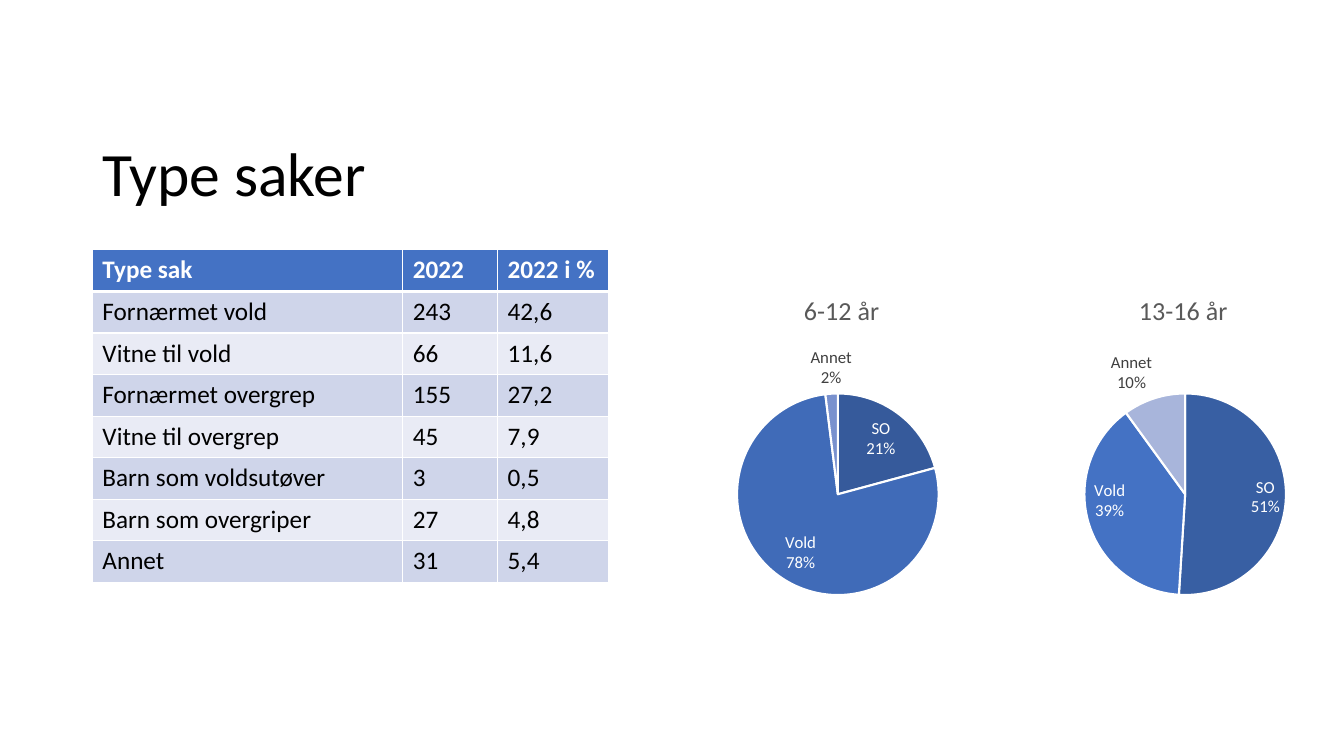
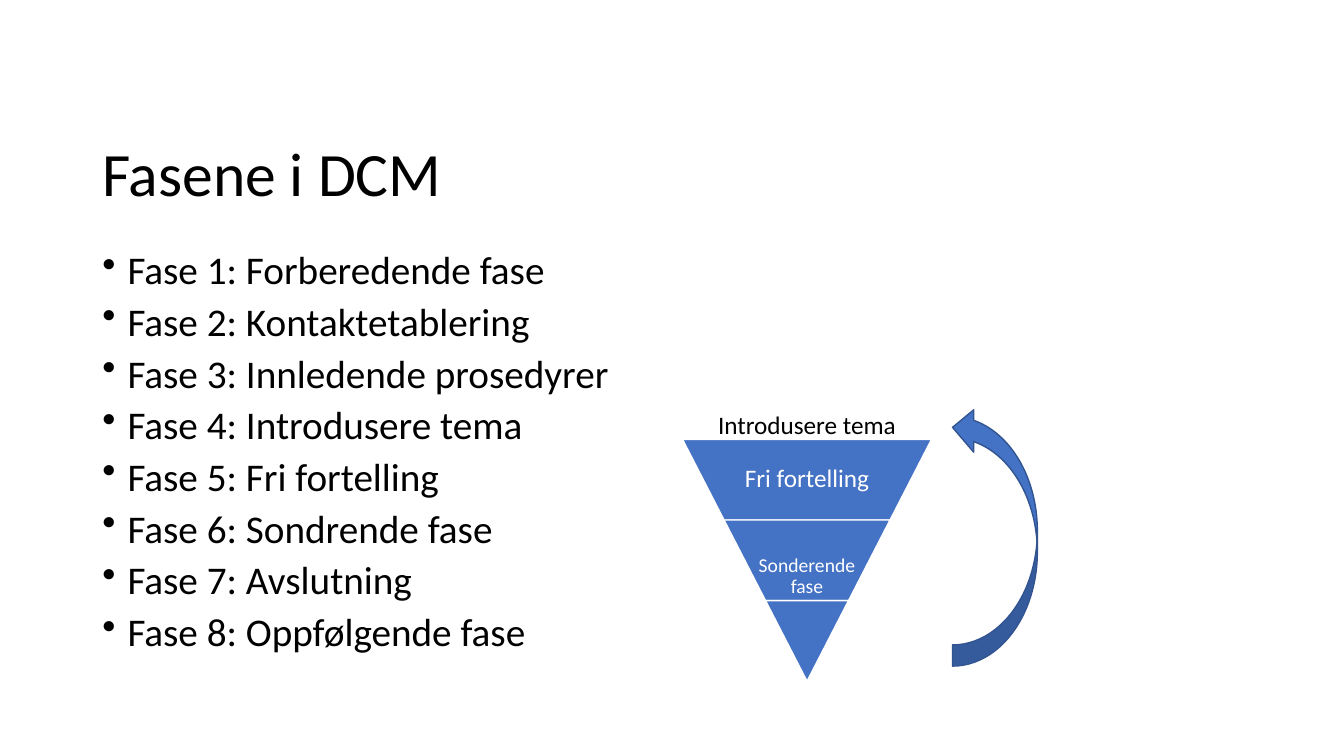
"""Two slides on case types and interview phases."""
from pptx import Presentation
from pptx.chart.data import CategoryChartData
from pptx.dml.color import RGBColor
from pptx.enum.chart import XL_CHART_TYPE, XL_LABEL_POSITION
from pptx.enum.shapes import MSO_SHAPE
from pptx.enum.text import MSO_ANCHOR, PP_ALIGN
from pptx.oxml import parse_xml
from pptx.oxml.ns import nsdecls, qn
from pptx.util import Emu, Pt

PIE = XL_CHART_TYPE.PIE
INSIDE, OUTSIDE = XL_LABEL_POSITION.INSIDE_END, XL_LABEL_POSITION.OUTSIDE_END
TRAPEZOID, CURVED_ARROW = MSO_SHAPE.TRAPEZOID, MSO_SHAPE.CURVED_LEFT_ARROW
TOP, MIDDLE, BOTTOM = MSO_ANCHOR.TOP, MSO_ANCHOR.MIDDLE, MSO_ANCHOR.BOTTOM
LEFT, CENTER = PP_ALIGN.LEFT, PP_ALIGN.CENTER

BLACK = RGBColor(0x00, 0x00, 0x00)
WHITE = RGBColor(0xFF, 0xFF, 0xFF)
BLUE = RGBColor(0x44, 0x72, 0xC4)
DARK_BLUE = RGBColor(0x32, 0x54, 0x91)
BANDS = RGBColor(0xCF, 0xD5, 0xEA), RGBColor(0xE9, 0xEB, 0xF5)
TITLE_GRAY = RGBColor(0x59, 0x59, 0x59)
LABEL_GRAY = RGBColor(0x40, 0x40, 0x40)
AGE_6_12 = RGBColor(0x36, 0x5A, 0x9B), RGBColor(0x40, 0x6B, 0xB8), RGBColor(0x79, 0x91, 0xCE)
AGE_13_16 = RGBColor(0x38, 0x5F, 0xA3), BLUE, RGBColor(0xA8, 0xB5, 0xDB)

FONT = "Calibri"
COLS, ROWS = 32, 18
UNIT = 381000
MARGIN, CONTENT_TOP = 2.2, 5.95


def grid(*lengths):
    """Turn grid columns or rows into lengths."""
    return [Emu(round(n * UNIT)) for n in lengths]


def set_font(font, size, color, bold=False):
    """Apply the deck's typeface with a size and colour."""
    font.name, font.size, font.bold = FONT, Pt(size), bold
    font.color.rgb = color


def put_text(tf, text, size=18, color=BLACK, bold=False, align=LEFT,
             spacing=1.0, before=0, bullet=False):
    """Write one paragraph per line of text."""
    for i, line in enumerate(text.split("\n")):
        p = tf.add_paragraph() if i else tf.paragraphs[0]
        p.alignment, p.line_spacing = align, spacing
        p.space_before = Pt(before if i else 0)
        if bullet:
            pPr = p._p.get_or_add_pPr()
            pPr.set("marL", "228600")
            pPr.set("indent", "-228600")
            pPr.append(parse_xml(f'<a:buChar {nsdecls("a")} char="•"/>'))
        r = p.add_run()
        r.text = line
        set_font(r.font, size, color, bold)


class Deck:
    """Holds the presentation, its style and the current slide."""

    def __init__(self):
        """Start an empty widescreen deck."""
        self.prs = Presentation()
        self.prs.slide_width, self.prs.slide_height = grid(COLS, ROWS)
        self.s = None

    def slide(self, title):
        """Add a blank slide with a title."""
        self.s = self.prs.slides.add_slide(self.prs.slide_layouts[6])
        self.text(title, MARGIN, 2.47, 27.6, 3.48, anchor=MIDDLE, size=44, spacing=0.9)

    def text(self, text, x, y, w, h, anchor=TOP, inset=None, **fmt):
        """Add a wrapping text box."""
        tf = self.s.shapes.add_textbox(*grid(x, y, w, h)).text_frame
        tf.word_wrap, tf.vertical_anchor = True, anchor
        if inset is not None:
            tf.margin_left = tf.margin_right = tf.margin_top = tf.margin_bottom = grid(inset)[0]
        put_text(tf, text, **fmt)

    def shape(self, kind, x, y, w, h, line):
        """Add a blue outlined shape turned upside down."""
        sp = self.s.shapes.add_shape(kind, *grid(x, y, w, h))
        sp.shadow.inherit = False
        sp.rotation = 180
        sp.fill.solid()
        sp.fill.fore_color.rgb = BLUE
        sp.line.color.rgb, sp.line.width = line, Pt(1)
        return sp

    def table(self, rows, x, y, widths, height):
        """Add a banded table with a header row."""
        table = self.s.shapes.add_table(
            len(rows), len(widths), *grid(x, y, sum(widths), height * len(rows))).table
        for column, width in zip(table.columns, grid(*widths)):
            column.width = width
        for i, row in enumerate(rows):
            table.rows[i].height = grid(height)[0]
            for j, value in enumerate(row):
                self.cell(table.cell(i, j), value, i)

    def cell(self, cell, value, row):
        """Fill, border and write one table cell."""
        header = row == 0
        cell.fill.solid()
        cell.fill.fore_color.rgb = BLUE if header else BANDS[(row - 1) % 2]
        put_text(cell.text_frame, value, color=WHITE if header else BLACK, bold=header)
        for i, side in enumerate("LRTB"):
            thick = (side == "B" and header) or (side == "T" and row == 1)
            cell._tc.get_or_add_tcPr().insert(i, parse_xml(
                f'<a:ln{side} {nsdecls("a")} w="{Pt(3 if thick else 1)}">'
                f'<a:solidFill><a:srgbClr val="{WHITE}"/></a:solidFill></a:ln{side}>'))

    def pie(self, title, values, colors, x, y, w, h, center, top, diameter):
        """Add a titled pie with its circle placed on the slide grid."""
        data = CategoryChartData(number_format='0"%"')
        data.categories = ["SO", "Vold", "Annet"]
        data.add_series(title, values)
        chart = self.s.shapes.add_chart(PIE, *grid(x, y, w, h), data).chart
        set_font(chart.font, 10, BLACK)
        chart.has_legend, chart.has_title = False, True
        put_text(chart.chart_title.text_frame, title, size=18.6, color=TITLE_GRAY, align=CENTER)
        chart.chart_title.include_in_layout = False
        chart.plots[0].vary_by_categories = True
        series = chart.plots[0].series[0]
        for i, color in enumerate(colors):
            point = series.points[i]
            point.format.fill.solid()
            point.format.fill.fore_color.rgb = color
            point.format.line.color.rgb, point.format.line.width = WHITE, Pt(1.5)
            outer = i == len(colors) - 1
            set_font(point.data_label.font, 12, LABEL_GRAY if outer else WHITE)
            point.data_label.position = OUTSIDE if outer else INSIDE
        for label in series._element.iter(qn("c:dLbl")):
            label.find(qn("c:showCatName")).set("val", "1")
            label.append(parse_xml(f'<c:separator {nsdecls("c")}>\n</c:separator>'))
        area = chart.plots[0]._element.getparent()
        for layout in area.findall(qn("c:layout")):
            area.remove(layout)
        shares = {"x": (center - diameter / 2 - x) / w, "y": (top - y) / h,
                  "w": diameter / w, "h": diameter / h}
        modes = '<c:xMode val="edge"/><c:yMode val="edge"/>'
        sizes = "".join(f'<c:{k} val="{v:.4f}"/>' for k, v in shares.items())
        area.insert(0, parse_xml(
            f'<c:layout {nsdecls("c")}><c:manualLayout><c:layoutTarget val="inner"/>'
            f'{modes}{sizes}</c:manualLayout></c:layout>'))

    def funnel(self, labels, x, y, w, h):
        """Stack trapezoids that narrow to a point at the bottom."""
        inset = w / len(labels) / 2
        for i, (label, size, anchor) in enumerate(labels):
            left, top, width = x + i * inset, y + i * h, w - 2 * i * inset
            sp = self.shape(TRAPEZOID, left, top, width, h, WHITE)
            sp.adjustments[0] = inset / min(width, h)
            if label:
                self.text(label, left + 0.175 * width, top, 0.65 * width, h, anchor=anchor,
                          inset=0.07, size=size, color=WHITE, align=CENTER, spacing=0.9)


def main():
    """Build and save both slides."""
    deck = Deck()
    deck.slide("Type saker")
    deck.table([
        ("Type sak", "2022", "2022 i %"),
        ("Fornærmet vold", "243", "42,6"),
        ("Vitne til vold", "66", "11,6"),
        ("Fornærmet overgrep", "155", "27,2"),
        ("Vitne til overgrep", "45", "7,9"),
        ("Barn som voldsutøver", "3", "0,5"),
        ("Barn som overgriper", "27", "4,8"),
        ("Annet", "31", "5,4"),
    ], MARGIN, CONTENT_TOP, (7.39, 2.26, 2.64), 0.99)
    for title, values, colors, x, w, center in (
            ("6-12 år", (21, 78, 2), AGE_6_12, 15.72, 8.64, 19.95),
            ("13-16 år", (51, 39, 10), AGE_13_16, 24.36, 7.63, 28.22)):
        deck.pie(title, values, colors, x, 6.55, w, 7.92, center, 9.37, 4.8)

    deck.slide("Fasene i DCM")
    phases = ("Forberedende fase", "Kontaktetablering", "Innledende prosedyrer",
              "Introdusere tema", "Fri fortelling", "Sondrende fase",
              "Avslutning", "Oppfølgende fase")
    deck.text("\n".join(f"Fase {n}: {name}" for n, name in enumerate(phases, 1)),
              MARGIN, CONTENT_TOP, 13.8, 10.27, size=28, spacing=0.8, before=10, bullet=True)
    deck.funnel([("Fri fortelling", 18, MIDDLE), ("Sonderende fase", 14, BOTTOM),
                 ("", 14, MIDDLE)], 16.25, 10.46, 5.93, 1.92)
    deck.text("Introdusere tema", 16.25, 9.62, 5.93, 0.96, align=CENTER)
    arrow = deck.shape(CURVED_ARROW, 22.68, 9.67, 2.02, 6.19, DARK_BLUE)
    arrow._element.spPr.find(qn("a:xfrm")).set("flipH", "1")
    deck.prs.save("out.pptx")


if __name__ == "__main__":
    main()
